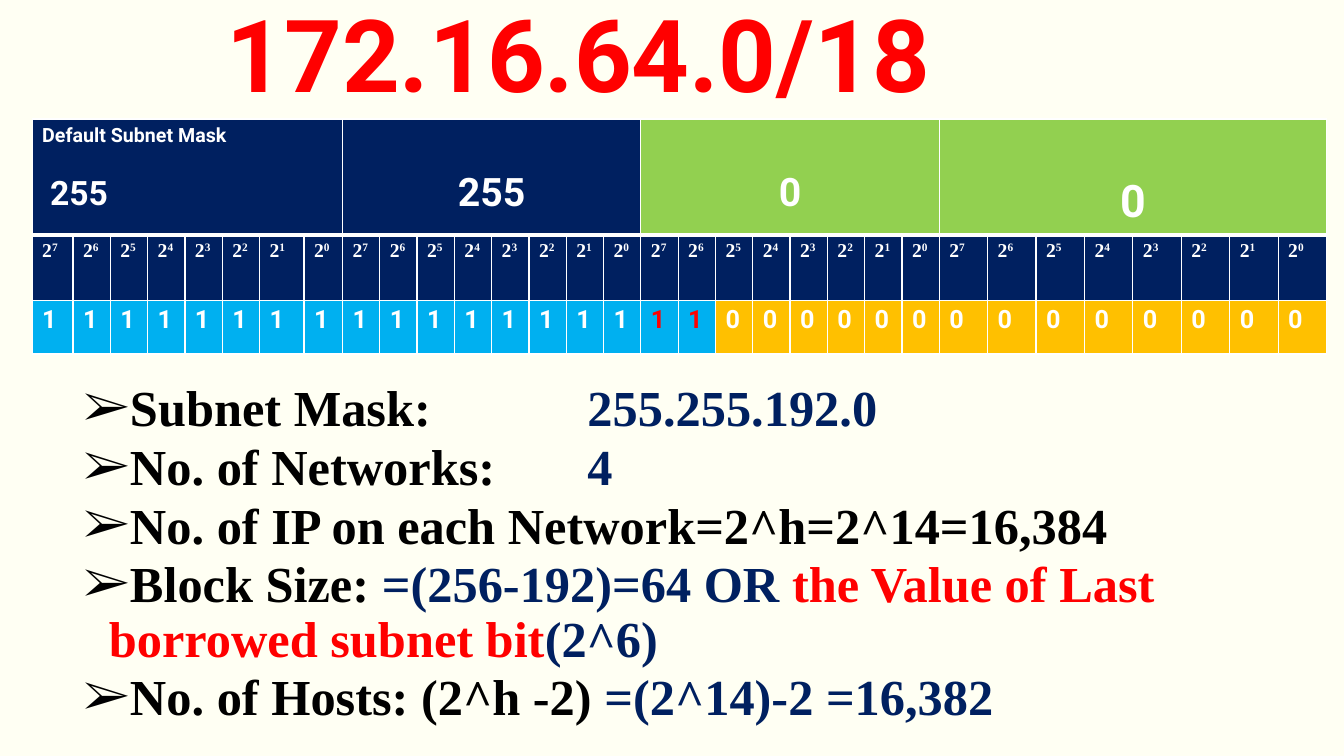
from lxml.etree import SubElement
from pptx import Presentation
from pptx.dml.color import RGBColor
from pptx.enum.text import MSO_ANCHOR as Anchor, MSO_AUTO_SIZE as AutoSize, PP_ALIGN as Align
from pptx.oxml.ns import qn
from pptx.util import Cm, Pt

IVORY = RGBColor(0xFF, 0xFF, 0xF3)
WHITE = RGBColor(0xFF, 0xFF, 0xFF)
BLACK = RGBColor(0, 0, 0)
RED = RGBColor(0xFF, 0, 0)
NAVY = RGBColor(0, 0x20, 0x60)
GREEN = RGBColor(0x92, 0xD0, 0x50)
SKY = RGBColor(0, 0xB0, 0xF0)
AMBER = RGBColor(0xFF, 0xC0, 0)
SANS, SERIF = "Roboto", "Times New Roman"

OCTETS = [("255", 24, NAVY), ("255", 28, NAVY), ("0", 28, GREEN), ("0", 32, GREEN)]
BIT_WIDTHS = [1.03] + [0.94] * 5 + [1.12, 0.97] + [0.94] * 16 + [1.22] * 8
ROW_HEIGHTS = [2.92, 1.65, 1.35]
DEFAULT_BITS, PREFIX_BITS = 16, 18
FACTS = [
    [("Subnet Mask:", BLACK), ("\t\t255.255.192.0", NAVY)],
    [("No. of Networks:", BLACK), ("\t4", NAVY)],
    [("No. of IP on each Network=2^h=2^14=16,384", BLACK)],
    [("Block Size: ", BLACK), ("=(256-192)=64 OR ", NAVY),
     ("the Value of Last borrowed subnet bit", RED), ("(2^6)", NAVY)],
    [("No. of Hosts: (2^h -2) ", BLACK), ("=(2^14)-2 =16,382", NAVY)],
]


def style(font, face, size, color):
    """Make a font bold in the given face, size and colour."""
    font.name, font.size, font.bold = face, Pt(size), True
    font.color.rgb = color


def place(part, left, top, width, height):
    """Move a placeholder to a box given in centimetres."""
    part.left, part.top, part.width, part.height = Cm(left), Cm(top), Cm(width), Cm(height)


def add_address(title, box):
    """Write the network address in the title placeholder."""
    place(title, *box)
    frame = title.text_frame
    frame.text = "172.16.64.0/18"
    frame.auto_size = AutoSize.NONE
    frame.vertical_anchor = Anchor.TOP
    frame.paragraphs[0].alignment = Align.LEFT
    style(frame.paragraphs[0].runs[0].font, SANS, 72, RED)


def paint_cell(cell, color, bottom_width=1):
    """Give a cell white borders and a solid fill."""
    properties = cell._tc.get_or_add_tcPr()
    for side in ("lnL", "lnR", "lnT", "lnB"):
        width = bottom_width if side == "lnB" else 1
        border = SubElement(properties, qn(f"a:{side}"), w=str(Pt(width)))
        paint = SubElement(border, qn("a:solidFill"))
        SubElement(paint, qn("a:srgbClr"), val=str(WHITE))
    cell.fill.solid()
    cell.fill.fore_color.rgb = color


def fill_octet(cell, value, size, labelled):
    """Write an octet of the default mask on the second line of its cell."""
    frame = cell.text_frame
    if labelled:
        frame.text = f"Default Subnet Mask\n{value}"
        label, octet = frame.paragraphs
        style(label.runs[0].font, SANS, 14, WHITE)
        octet.space_before = Pt(19)
        octet._p.get_or_add_pPr().set("marL", str(Cm(0.2)))
    else:
        frame.text = value
        octet = frame.paragraphs[0]
        octet.alignment = Align.CENTER
        cell.margin_top = Cm(0.13) + Pt(round(size * 1.17))
    style(octet.runs[0].font, SANS, size, WHITE)


def fill_bit(weight_cell, bit_cell, bit):
    """Write the power of two and the mask bit of one column."""
    for cell in (weight_cell, bit_cell):
        cell.margin_right = 0
    weight = weight_cell.text_frame.paragraphs[0]
    weight.text = "2"
    exponent = weight.add_run()
    exponent.text = str(7 - bit % 8)
    for run in weight.runs:
        style(run.font, SERIF, 14, WHITE)
    exponent._r.get_or_add_rPr().set("baseline", "30000")

    in_mask = bit < PREFIX_BITS
    borrowed = DEFAULT_BITS <= bit < PREFIX_BITS
    paint_cell(weight_cell, NAVY)
    paint_cell(bit_cell, SKY if in_mask else AMBER)
    bit_cell.text_frame.text = "1" if in_mask else "0"
    style(bit_cell.text_frame.paragraphs[0].runs[0].font, SANS, 18, RED if borrowed else WHITE)


def add_mask_table(slide, left, top):
    """Build the table of octets, bit weights and mask bits."""
    table = slide.shapes.add_table(
        len(ROW_HEIGHTS), len(BIT_WIDTHS), Cm(left), Cm(top),
        Cm(sum(BIT_WIDTHS)), Cm(sum(ROW_HEIGHTS))).table
    table.first_row = table.horz_banding = False
    for row, height in zip(table.rows, ROW_HEIGHTS):
        row.height = Cm(height)
    for bit, width in enumerate(BIT_WIDTHS):
        table.columns[bit].width = Cm(width)
        paint_cell(table.cell(0, bit), OCTETS[bit // 8][2], bottom_width=3)
        fill_bit(table.cell(1, bit), table.cell(2, bit), bit)
    for index, (value, size, _) in enumerate(OCTETS):
        octet_cell = table.cell(0, index * 8)
        octet_cell.merge(table.cell(0, index * 8 + 7))
        fill_octet(octet_cell, value, size, labelled=index == 0)


def add_facts(body, box):
    """List the subnet facts in the body placeholder."""
    place(body, *box)
    frame = body.text_frame
    frame.auto_size = AutoSize.NONE
    for index, parts in enumerate(FACTS):
        fact = frame.add_paragraph() if index else frame.paragraphs[0]
        properties = fact._p.get_or_add_pPr()
        for key, length in (("marL", 0.64), ("indent", -0.64), ("defTabSz", 2.54)):
            properties.set(key, str(Cm(length)))
        SubElement(properties, qn("a:buFont"), typeface=SERIF)
        SubElement(properties, qn("a:buChar"), char="➢")
        fact.line_spacing = 0.9
        fact.space_before = Pt(3 if index else 0)
        for text, color in parts:
            run = fact.add_run()
            run.text = text
            style(run.font, SERIF, 36, color)


def main():
    """Build the subnetting slide and save it."""
    deck = Presentation()
    deck.slide_width, deck.slide_height = Cm(33.87), Cm(19.05)
    slide = deck.slides.add_slide(deck.slide_layouts[1])
    slide.background.fill.solid()
    slide.background.fill.fore_color.rgb = IVORY
    add_address(slide.shapes.title, (5.46, -0.33, 20.73, 3.33))
    add_mask_table(slide, 0.81, 3.0)
    add_facts(slide.placeholders[1], (1.85, 9.53, 30.99, 8.66))
    deck.save("out.pptx")


if __name__ == "__main__":
    main()
